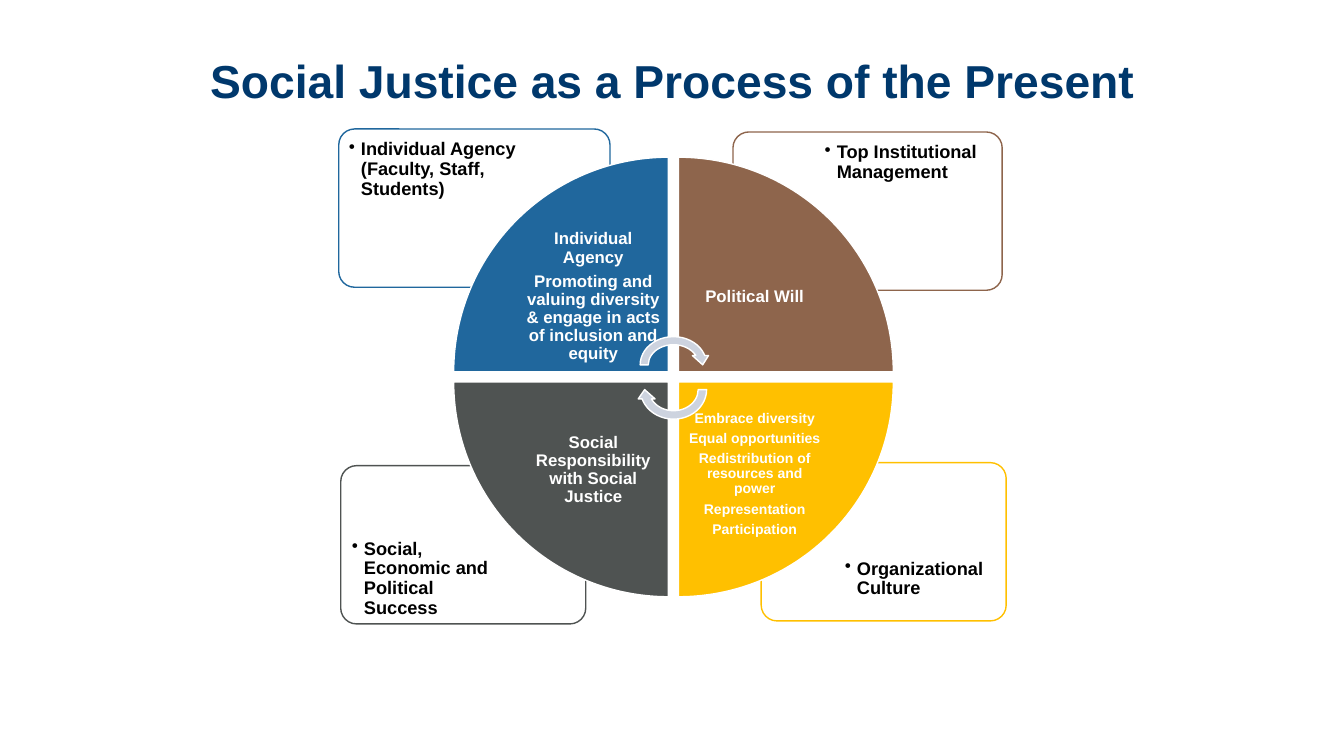
import pptx
import pptx.util
import pptx.dml.color
import pptx.enum.shapes
import pptx.enum.text
import pptx.oxml
import pptx.oxml.ns
import lxml.etree

Inches = pptx.util.Inches
Pt = pptx.util.Pt
RGBColor = pptx.dml.color.RGBColor
MSO_SHAPE = pptx.enum.shapes.MSO_SHAPE
PP_ALIGN = pptx.enum.text.PP_ALIGN
MSO_ANCHOR = pptx.enum.text.MSO_ANCHOR
qn = pptx.oxml.ns.qn

NAVY = RGBColor(0x00, 0x38, 0x6C)
BLUE = RGBColor(0x20, 0x67, 0x9D)
BROWN = RGBColor(0x8E, 0x65, 0x4C)
YELLOW = RGBColor(0xFF, 0xC0, 0x00)
GRAY = RGBColor(0x4F, 0x53, 0x52)
PALE = RGBColor(0xCD, 0xD3, 0xDF)
WHITE = RGBColor(0xFF, 0xFF, 0xFF)
BLACK = RGBColor(0x00, 0x00, 0x00)

presentation = pptx.Presentation()
presentation.slide_width = Inches(13.33)
presentation.slide_height = Inches(7.5)
slide = presentation.slides.add_slide(presentation.slide_layouts[6])


def add_figure(preset, box, fill, line, rotation=0):
    figure = slide.shapes.add_shape(preset, *map(Inches, box))
    figure.shadow.inherit = False
    figure.fill.solid()
    figure.fill.fore_color.rgb = fill
    figure.line.color.rgb = line
    figure.line.width = Pt(1)
    figure.rotation = rotation
    return figure


def add_label(box, lines, size, color, inset, anchor=MSO_ANCHOR.MIDDLE, bullet=False):
    """Add bold text, one paragraph a line, centred unless bulleted."""
    frame = slide.shapes.add_textbox(*map(Inches, box)).text_frame
    frame.word_wrap = True
    frame.vertical_anchor = anchor
    frame.margin_left = frame.margin_right = Inches(inset)
    frame.margin_top = frame.margin_bottom = Inches(inset)
    frame.text = "\n".join(lines)
    for paragraph in frame.paragraphs:
        paragraph.line_spacing = 0.9
        if bullet:
            properties = paragraph._p.get_or_add_pPr()
            properties.set("marL", str(Inches(0.12)))
            properties.set("indent", str(-Inches(0.12)))
            lxml.etree.SubElement(properties, qn("a:buChar")).set("char", "•")
        else:
            paragraph.alignment = PP_ALIGN.CENTER
            paragraph.space_after = Pt(0.35 * size)
        paragraph.font.name = "Arial"
        paragraph.font.size = Pt(size)
        paragraph.font.bold = True
        paragraph.font.color.rgb = color


add_label((0.92, 0.25, 11.5, 1.15), ["Social Justice as a Process of the Present"],
          33, NAVY, 0.05)

# Corner cards: card box, outline, text box, text
cards = [
    ((7.55, 4.59, 2.43, 1.57), YELLOW, (8.31, 5.48, 1.63, 0.65),
     "Organizational Culture"),
    ((3.38, 4.62, 2.43, 1.57), GRAY, (3.42, 5.28, 1.63, 0.88),
     "Social, Economic and Political Success"),
    ((7.27, 1.31, 2.67, 1.57), BROWN, (8.11, 1.35, 1.8, 1.11),
     "Top Institutional Management"),
    ((3.36, 1.28, 2.69, 1.57), BLUE, (3.39, 1.32, 1.81, 1.11),
     "Individual Agency (Faculty, Staff, Students)"),
]
for card_box, outline, text_box, text in cards:
    card = add_figure(MSO_SHAPE.ROUNDED_RECTANGLE, card_box, WHITE, outline)
    card.adjustments[0] = 0.1
    add_label(text_box, [text], 13, BLACK, 0.07, MSO_ANCHOR.TOP, bullet=True)

# Wheel quarters, clockwise from top left: wedge corner, colour, text corner, size, inset, lines
quarters = [
    (4.5, 1.56, BLUE, 5.13, 2.19, 12, 0.09,
     ["Individual Agency",
      "Promoting and valuing diversity & engage in acts of inclusion and equity"]),
    (6.73, 1.56, BROWN, 6.73, 2.19, 12, 0.09, ["Political Will"]),
    (6.73, 3.79, YELLOW, 6.73, 3.95, 10, 0.06,
     ["Embrace diversity", "Equal opportunities",
      "Redistribution of resources and power", "Representation", "Participation"]),
    (4.5, 3.79, GRAY, 5.13, 3.91, 12, 0.09,
     ["Social Responsibility with Social Justice"]),
]
for turn, (left, top, color, text_left, text_top, size, inset, lines) in enumerate(quarters):
    add_figure(MSO_SHAPE.PIE_WEDGE, (left, top, 2.13, 2.13), color, WHITE, 90 * turn)
    add_label((text_left, text_top, 1.51, 1.51), lines, size, WHITE, inset)

for top, height, rotation in [(3.3, 0.64, 0), (3.53, 0.67, 180)]:
    add_figure(MSO_SHAPE.CIRCULAR_ARROW, (6.31, top, 0.74, height), PALE, WHITE, rotation)

presentation.save("out.pptx")
